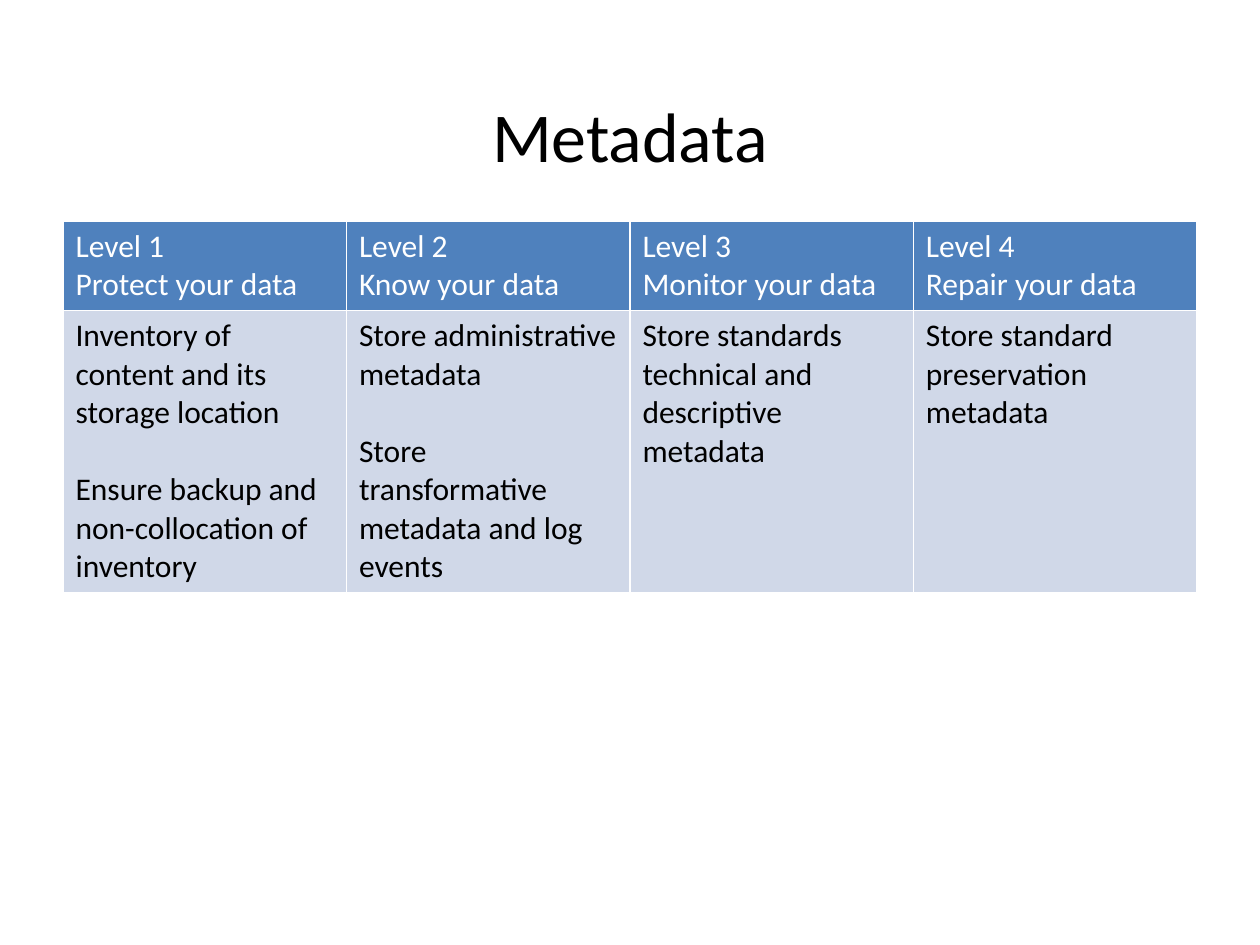
import dataclasses

import lxml.etree
import pptx
import pptx.dml.color
import pptx.enum.text
import pptx.oxml.ns
import pptx.util

PX = pptx.util.Inches(1) // 126
FONT = "Calibri"
BLACK = pptx.dml.color.RGBColor(0x00, 0x00, 0x00)
WHITE = pptx.dml.color.RGBColor(0xFF, 0xFF, 0xFF)
HEADER_BLUE = pptx.dml.color.RGBColor(0x4F, 0x81, 0xBD)
BODY_BLUE = pptx.dml.color.RGBColor(0xD0, 0xD8, 0xE8)


@dataclasses.dataclass
class Level:
    name: str
    goal: str
    tasks: list[str]


@dataclasses.dataclass
class CellStyle:
    fill: pptx.dml.color.RGBColor
    text: pptx.dml.color.RGBColor
    gap: int  # points between paragraphs


HEADER = CellStyle(HEADER_BLUE, WHITE, 0)
BODY = CellStyle(BODY_BLUE, BLACK, 22)

LEVELS = [
    Level("Level 1", "Protect your data", [
        "Inventory of content and its storage location",
        "Ensure backup and non-collocation of inventory"]),
    Level("Level 2", "Know your data", [
        "Store administrative metadata",
        "Store transformative metadata and log events"]),
    Level("Level 3", "Monitor your data", [
        "Store standards technical and descriptive metadata"]),
    Level("Level 4", "Repair your data", [
        "Store standard preservation metadata"]),
]


def format_font(font, size: int, color: pptx.dml.color.RGBColor) -> None:
    font.name = FONT
    font.size = pptx.util.Pt(size)
    font.bold = False
    font.color.rgb = color


def add_borders(cell) -> None:
    """Give the cell a thin white line on each side."""
    properties = cell._tc.get_or_add_tcPr()
    for side in ("a:lnL", "a:lnR", "a:lnT", "a:lnB"):
        line = lxml.etree.SubElement(
            properties, pptx.oxml.ns.qn(side), w=str(pptx.util.Pt(1)))
        fill = lxml.etree.SubElement(line, pptx.oxml.ns.qn("a:solidFill"))
        lxml.etree.SubElement(fill, pptx.oxml.ns.qn("a:srgbClr"), val=str(WHITE))


def fill_cell(cell, lines: list[str], style: CellStyle) -> None:
    add_borders(cell)
    cell.fill.solid()
    cell.fill.fore_color.rgb = style.fill
    cell.text_frame.text = "\n".join(lines)
    for index, para in enumerate(cell.text_frame.paragraphs):
        if index:
            para.space_before = pptx.util.Pt(style.gap)
        for span in para.runs:
            format_font(span.font, 18, style.text)


def add_title(page, text: str) -> None:
    title = page.shapes.title
    title.left, title.top, title.width, title.height = (
        63 * PX, 73 * PX, 1134 * PX, 122 * PX)
    title.text_frame.text = text
    title.text_frame.vertical_anchor = pptx.enum.text.MSO_ANCHOR.MIDDLE
    para = title.text_frame.paragraphs[0]
    para.alignment = pptx.enum.text.PP_ALIGN.CENTER
    format_font(para.runs[0].font, 40, BLACK)


def add_level_table(page, levels: list[Level]) -> None:
    row_heights = (89, 281)
    table = page.shapes.add_table(
        2, len(levels), 63 * PX, 221 * PX,
        1134 * PX, sum(row_heights) * PX).table
    for row, height in zip(table.rows, row_heights):
        row.height = height * PX
    for column, level in enumerate(levels):
        fill_cell(table.cell(0, column), [level.name, level.goal], HEADER)
        fill_cell(table.cell(1, column), level.tasks, BODY)


def main() -> None:
    deck = pptx.Presentation()
    deck.slide_width = pptx.util.Inches(10)
    deck.slide_height = pptx.util.Inches(7.5)
    page = deck.slides.add_slide(deck.slide_layouts[5])

    # Title
    add_title(page, "Metadata")

    # Levels across, header above tasks
    add_level_table(page, LEVELS)

    deck.save("out.pptx")


if __name__ == "__main__":
    main()
